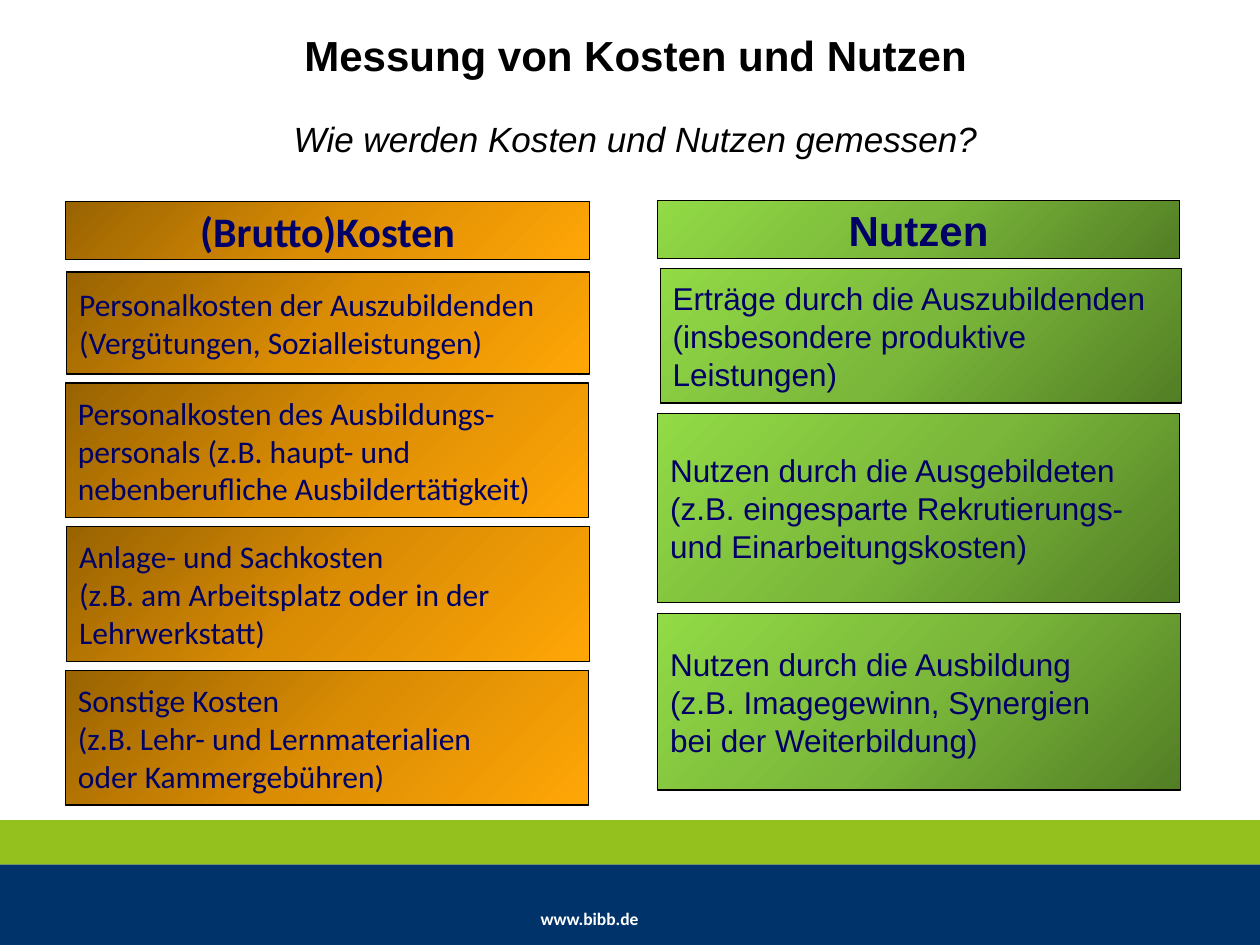
from copy import deepcopy
from pptx import Presentation
from pptx import util as u
from pptx.dml.color import RGBColor
from pptx.enum import shapes, text
from pptx.oxml import ns

BLACK = RGBColor(0x00, 0x00, 0x00)
WHITE = RGBColor(0xFF, 0xFF, 0xFF)
NAVY = RGBColor(0x00, 0x33, 0x69)
LIME = RGBColor(0x95, 0xC1, 0x1F)
INK = RGBColor(0x00, 0x00, 0x66)
GREENS = [RGBColor(0x53, 0x7E, 0x25), RGBColor(0x7A, 0xB7, 0x3A), RGBColor(0x92, 0xDA, 0x46)]
GOLDS = [RGBColor(0x99, 0x63, 0x02), RGBColor(0xDA, 0x8C, 0x03), RGBColor(0xFF, 0xA6, 0x07)]
LEFT, MID = text.PP_ALIGN.LEFT, text.PP_ALIGN.CENTER


class Deck:
    def __init__(self):
        self.prs = Presentation()
        self.prs.slide_width, self.prs.slide_height = u.Inches(10), u.Inches(7.5)
        self.slide = self.prs.slides.add_slide(self.prs.slide_layouts[6])

    def put(self, frame, paras, size, font, color, align=LEFT, bold=False, slant=False, space=1.0):
        for i, para in enumerate(paras):
            p = frame.paragraphs[0] if i == 0 else frame.add_paragraph()
            p.alignment = align
            p.line_spacing = space
            for j, line in enumerate(para.split("\n")):
                if j:
                    p.add_line_break()
                run = p.add_run()
                run.text = line
                run.font.size = u.Pt(size)
                run.font.name = font
                run.font.color.rgb = color
                run.font.bold = bold
                run.font.italic = slant

    def rect(self, x, y, w, h):
        box = self.slide.shapes.add_shape(
            shapes.MSO_SHAPE.RECTANGLE, u.Inches(x), u.Inches(y), u.Inches(w), u.Inches(h))
        box.shadow.inherit = False
        return box

    def band(self, y, h, color):
        box = self.rect(0, y, 10, h)
        box.fill.solid()
        box.fill.fore_color.rgb = color
        box.line.fill.background()

    def label(self, x, y, w, h, line, size, font, color, pad=True, **style):
        frame = self.slide.shapes.add_textbox(
            u.Inches(x), u.Inches(y), u.Inches(w), u.Inches(h)).text_frame
        frame.word_wrap = True
        if not pad:
            frame.margin_left = frame.margin_right = 0
            frame.margin_top = frame.margin_bottom = 0
        self.put(frame, [line], size, font, color, **style)

    def card(self, x, y, w, h, paras, tones, angle, font, size=18, **style):
        box = self.rect(x, y, w, h)
        box.fill.gradient()
        stops = box._element.spPr.find(".//" + ns.qn("a:gsLst"))
        stops.insert(1, deepcopy(stops[0]))
        for stop, tone, place in zip(box.fill.gradient_stops, tones, (0, 0.5, 1)):
            stop.color.rgb = tone
            stop.position = place
        box.fill.gradient_angle = angle
        box.line.color.rgb = BLACK
        box.line.width = u.Pt(0.75)
        frame = box.text_frame
        frame.word_wrap = False
        frame.vertical_anchor = text.MSO_ANCHOR.MIDDLE
        self.put(frame, paras, size, font, INK, **style)


def main():
    deck = Deck()
    deck.band(6.86, 0.64, NAVY)
    deck.band(6.51, 0.35, LIME)
    deck.label(4.29, 7.21, 1.02, 0.17, "www.bibb.de", 10, "Calibri", WHITE, pad=False, bold=True)
    deck.label(0.52, 0.23, 9.05, 0.47, "Messung von Kosten und Nutzen", 24, "Arial", BLACK,
               align=MID, bold=True, space=0.9)
    deck.label(0.52, 0.92, 9.05, 0.41, "Wie werden Kosten und Nutzen gemessen?", 20, "Arial", BLACK,
               align=MID, slant=True, space=0.9)

    gains = [
        (5.24, 2.13, 4.14, 1.07, ["Erträge durch die Auszubildenden", "(insbesondere produktive",
                                  "Leistungen)"]),
        (5.22, 3.28, 4.14, 1.5, ["Nutzen durch die Ausgebildeten", "(z.B. eingesparte Rekrutierungs-",
                                 "und Einarbeitungskosten)"]),
        (5.22, 4.87, 4.15, 1.4, ["Nutzen durch die Ausbildung", "(z.B. Imagegewinn, Synergien",
                                 "bei der Weiterbildung)"]),
    ]
    costs = [
        (0.53, 2.16, 4.15, 0.81, ["Personalkosten der Auszubildenden",
                                  "(Vergütungen, Sozialleistungen)"]),
        (0.52, 3.04, 4.15, 1.07, ["Personalkosten des Ausbildungs-\npersonals (z.B. haupt- und \n"
                                  "nebenberufliche Ausbildertätigkeit)"]),
        (0.53, 4.18, 4.15, 1.07, ["Anlage- und Sachkosten", "(z.B. am Arbeitsplatz oder in der",
                                  "Lehrwerkstatt)"]),
        (0.52, 5.32, 4.15, 1.07, ["Sonstige Kosten",
                                  "(z.B. Lehr- und Lernmaterialien \noder Kammergebühren)"]),
    ]
    sides = [
        ((5.22, 1.59, 4.14, 0.46, ["Nutzen"]), gains, (GREENS, 135, "Arial")),
        ((0.52, 1.6, 4.16, 0.46, ["(Brutto)Kosten"]), costs, (GOLDS, 315, "Calibri")),
    ]
    for head, cards, look in sides:
        deck.card(*head, *look, size=24, align=MID, bold=True)
        for card in cards:
            deck.card(*card, *look)
    deck.prs.save("out.pptx")


if __name__ == "__main__":
    main()
